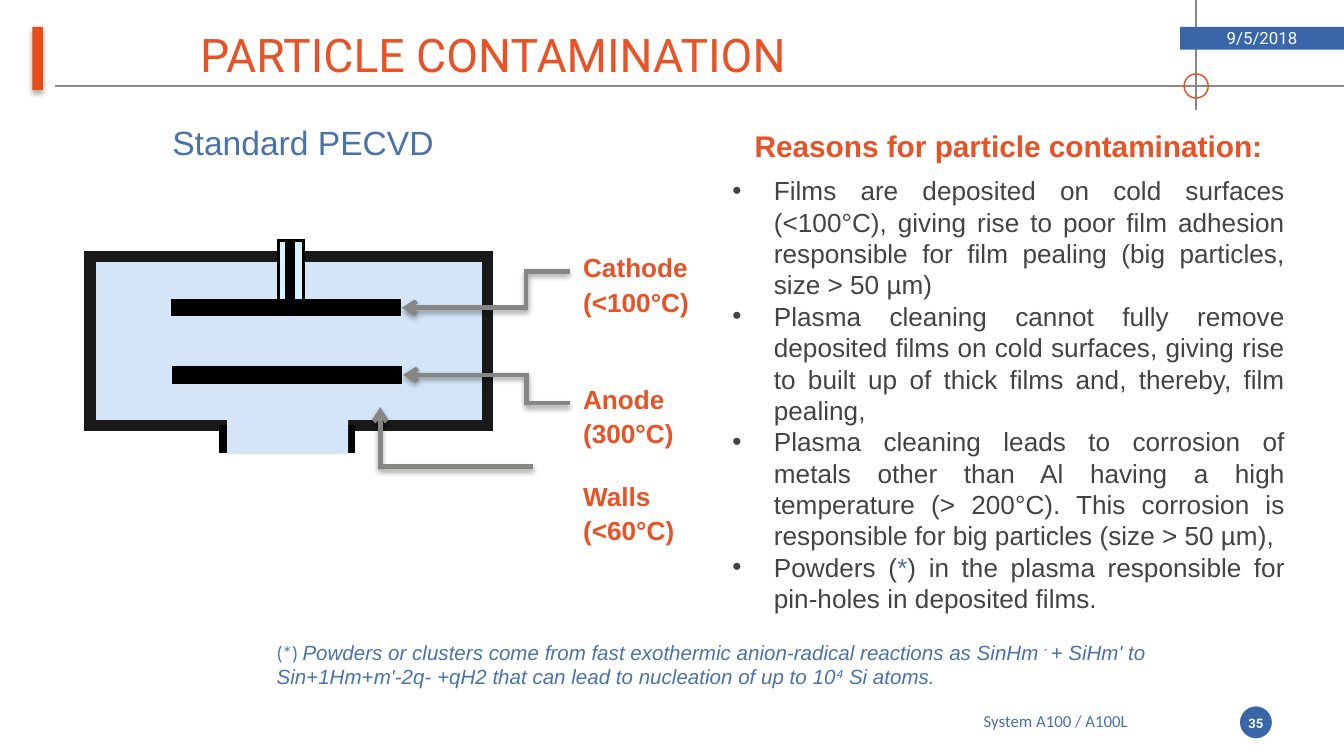
import pptx
import pptx.dml.color
import pptx.enum.shapes
import pptx.enum.text
import pptx.oxml
import pptx.oxml.ns
import pptx.util

Inches = pptx.util.Inches
Pt = pptx.util.Pt
SHAPE = pptx.enum.shapes.MSO_SHAPE
CONNECTOR = pptx.enum.shapes.MSO_CONNECTOR
ALIGN = pptx.enum.text.PP_ALIGN
ANCHOR = pptx.enum.text.MSO_ANCHOR

ORANGE, BLUE, TEXT_BLUE = "E74D18", "3866A8", "4972AB"
TITLE_ORANGE, DARK, GRAY = "E75326", "434342", "868685"
PALE, BLACK, WHITE = "D4E5F7", "000000", "FFFFFF"

REASONS = [
    ["Films are deposited on cold surfaces (<100°C), giving rise to poor film "
     "adhesion responsible for film pealing (big particles, size > 50 µm)"],
    ["Plasma cleaning cannot fully remove deposited films on cold surfaces, "
     "giving rise to built up of thick films and, thereby, film pealing,"],
    ["Plasma cleaning leads to corrosion of metals other than Al having a high "
     "temperature (> 200°C). This corrosion is responsible for big particles "
     "(size > 50 µm),"],
    ["Powders (", ("*", {"color": TEXT_BLUE}),
     ") in the plasma responsible for pin-holes in deposited films."],
]
FOOTNOTE = [
    ("(*) ", {"size": 10.5, "font": "Calibri", "italic": False}),
    "Powders or clusters come from fast exothermic anion-radical reactions as SinHm",
    (" - ", {"raised": True}),
    "+ SiHm' to Sin+1Hm+m'-2q- +qH2 that can lead to nucleation of up to 10",
    ("4", {"raised": True}),
    " Si atoms.",
]


def rgb(color):
    return pptx.dml.color.RGBColor.from_string(color)


def xml(tag, attrs="", inner=""):
    ns = pptx.oxml.ns.nsdecls("a")
    return pptx.oxml.parse_xml(f"<a:{tag} {ns} {attrs}>{inner}</a:{tag}>")


def add_to_outline(s, element):
    s._element.spPr.find(pptx.oxml.ns.qn("a:ln")).append(element)


def set_effects(s, alpha=0, dist=0):
    inner = ""
    if alpha:
        inner = (f'<a:outerShdw blurRad="{Pt(3.1)}" dist="{Pt(dist)}" dir="5400000" '
                 f'rotWithShape="0"><a:srgbClr val="{BLACK}">'
                 f'<a:alpha val="{alpha * 1000}"/></a:srgbClr></a:outerShdw>')
    s._element.spPr.append(xml("effectLst", inner=inner))


def add_run(p, text, size=14, font="Arial", color=DARK, bold=False,
            italic=False, raised=False):
    r = p.add_run()
    r.text = text
    r.font.size = Pt(size)
    r.font.name = font
    r.font.color.rgb = rgb(color)
    r.font.bold = bold
    r.font.italic = italic
    if raised:
        r.font._element.set("baseline", "30000")


def write(tf, text, first=False, align=ALIGN.LEFT, before=0, after=0,
          spacing=None, bullet=False, **style):
    p = tf.paragraphs[0] if first else tf.add_paragraph()
    if bullet:
        pPr = p._p.get_or_add_pPr()
        pPr.set("marL", str(Inches(0.31)))
        pPr.set("indent", str(Inches(-0.31)))
        pPr.append(xml("buFont", 'typeface="Arial"'))
        pPr.append(xml("buChar", 'char="•"'))
    p.alignment = align
    p.space_before, p.space_after = Pt(before), Pt(after)
    if spacing:
        p.line_spacing = spacing
    for part in [text] if isinstance(text, str) else text:
        words, change = (part, {}) if isinstance(part, str) else part
        add_run(p, words, **{**style, **change})


def add_text(slide, box, anchor=ANCHOR.TOP):
    tf = slide.shapes.add_textbox(*map(Inches, box)).text_frame
    tf.word_wrap = True
    tf.vertical_anchor = anchor
    return tf


def add_block(slide, box, fill=None, line=None, width=0.75, kind=SHAPE.RECTANGLE):
    s = slide.shapes.add_shape(kind, *map(Inches, box))
    s.shadow.inherit = False
    if fill:
        s.fill.solid()
        s.fill.fore_color.rgb = rgb(fill)
    else:
        s.fill.background()
    if line:
        s.line.color.rgb = rgb(line)
        s.line.width = Pt(width)
        add_to_outline(s, xml("miter", 'lim="800000"'))
    else:
        s.line.fill.background()
    return s


def add_label(slide, box, text, fill, **style):
    tf = add_block(slide, box, fill).text_frame
    tf.word_wrap = True
    tf.vertical_anchor = ANCHOR.MIDDLE
    write(tf, text, first=True, align=ALIGN.CENTER, size=9, **style)


def add_line(slide, start, end, color, width, kind=CONNECTOR.STRAIGHT):
    c = slide.shapes.add_connector(kind, *map(Inches, start + end))
    c.line.color.rgb = rgb(color)
    c.line.width = Pt(width)
    return c


def add_callout(slide, start, end, bend=None):
    c = add_line(slide, start, end, GRAY, 2.5, CONNECTOR.ELBOW)
    geometry = c._element.spPr.prstGeom
    if bend:
        guides = geometry.get_or_add_avLst()
        guides.append(xml("gd", f'name="adj1" fmla="val {round(bend * 100000)}"'))
    else:
        geometry.set("prst", "bentConnector2")
    add_to_outline(c, xml("miter", 'lim="800000"'))
    add_to_outline(c, xml("tailEnd", 'type="arrow"'))
    set_effects(c, 38, 1.6)


def add_rule(slide, start, end, color, width):
    set_effects(add_line(slide, start, end, color, width))


def draw_frame(slide):
    add_rule(slide, (0.41, 0.64), (10, 0.64), "888886", 0.75)
    add_rule(slide, (8.9, 0.82), (8.9, 0), "888886", 0.75)
    add_block(slide, (8.81, 0.55, 0.18, 0.18), line=ORANGE, kind=SHAPE.OVAL)
    accent = add_block(slide, (0.24, 0.2, 0.08, 0.47), ORANGE)
    accent._element.spPr.remove(accent._element.spPr.effectLst)
    set_effects(accent, 35, 1.8)
    add_block(slide, (9.21, 5.24, 0.27, 0.27), BLUE, WHITE, 2.25, SHAPE.OVAL)
    title = add_text(slide, (1.39, 0.14, 7.39, 0.52), ANCHOR.MIDDLE)
    write(title, "PARTICLE CONTAMINATION", first=True, size=24.8, font="Roboto",
          color=TITLE_ORANGE)
    add_label(slide, (8.78, 0.2, 1.22, 0.17), "9/5/2018", BLUE, font="Roboto", color=WHITE)
    add_label(slide, (6.81, 5.24, 2.09, 0.25), "System A100 / A100L", WHITE,
              font="Calibri", color=TEXT_BLUE)
    number = add_text(slide, (9.18, 5.24, 0.33, 0.28), ANCHOR.MIDDLE)
    number.margin_left = number.margin_right = 0
    write(number, "35", first=True, align=ALIGN.CENTER, size=7, font="Roboto",
          color=WHITE, bold=True)


def draw_reactor(slide):
    add_block(slide, (0.67, 1.91, 2.96, 1.26), PALE, "191919", 6)
    add_rule(slide, (1.27, 2.29), (2.98, 2.29), BLACK, 9.13)
    add_rule(slide, (1.28, 2.79), (2.99, 2.79), BLACK, 10)
    add_block(slide, (2.07, 1.79, 0.19, 0.45), "D5F3FF", BLACK, 1.75)
    add_rule(slide, (2.16, 2.32), (2.16, 1.79), "000005", 5.38)
    add_block(slide, (1.66, 3.19, 0.95, 0.15), TITLE_ORANGE, BLACK, 4.13)
    add_block(slide, (1.69, 3.11, 0.9, 0.27), PALE)


def draw_callouts(slide):
    tf = add_text(slide, (4.24, 1.8, 1.11, 2.33))
    labels = [("Cathode", 0), ("(<100°C)", 0), ("Anode (300°C)", 33.5), ("Walls (<60°C)", 15)]
    for i, (text, before) in enumerate(labels):
        write(tf, text, first=i == 0, before=before, spacing=1.1,
              color=TITLE_ORANGE, bold=True)
    add_callout(slide, (4.24, 2.02), (2.99, 2.29), 0.26)
    add_callout(slide, (4.24, 3), (3, 2.79), 0.26)
    add_callout(slide, (3.97, 3.47), (2.83, 3.03))


def main():
    prs = pptx.Presentation()
    prs.slide_width = Inches(10)
    prs.slide_height = prs.slide_width * 9 // 16
    slide = prs.slides.add_slide(prs.slide_layouts[6])
    draw_frame(slide)
    draw_reactor(slide)
    reasons = add_text(slide, (5.35, 0.9, 4.31, 3.75))
    write(reasons, "Reasons for particle contamination:", first=True,
          align=ALIGN.CENTER, after=6, size=16, color=TITLE_ORANGE, bold=True)
    for reason in REASONS:
        write(reasons, reason, align=ALIGN.JUSTIFY, bullet=True)
    draw_callouts(slide)
    heading = add_text(slide, (0.42, 0.86, 3.67, 0.4))
    write(heading, "Standard PECVD", first=True, align=ALIGN.CENTER, size=18,
          color=TEXT_BLUE)
    footnote = add_text(slide, (1.96, 4.71, 7.7, 0.47))
    write(footnote, FOOTNOTE, first=True, size=11, color=TEXT_BLUE, italic=True)
    prs.save("out.pptx")


if __name__ == "__main__":
    main()
